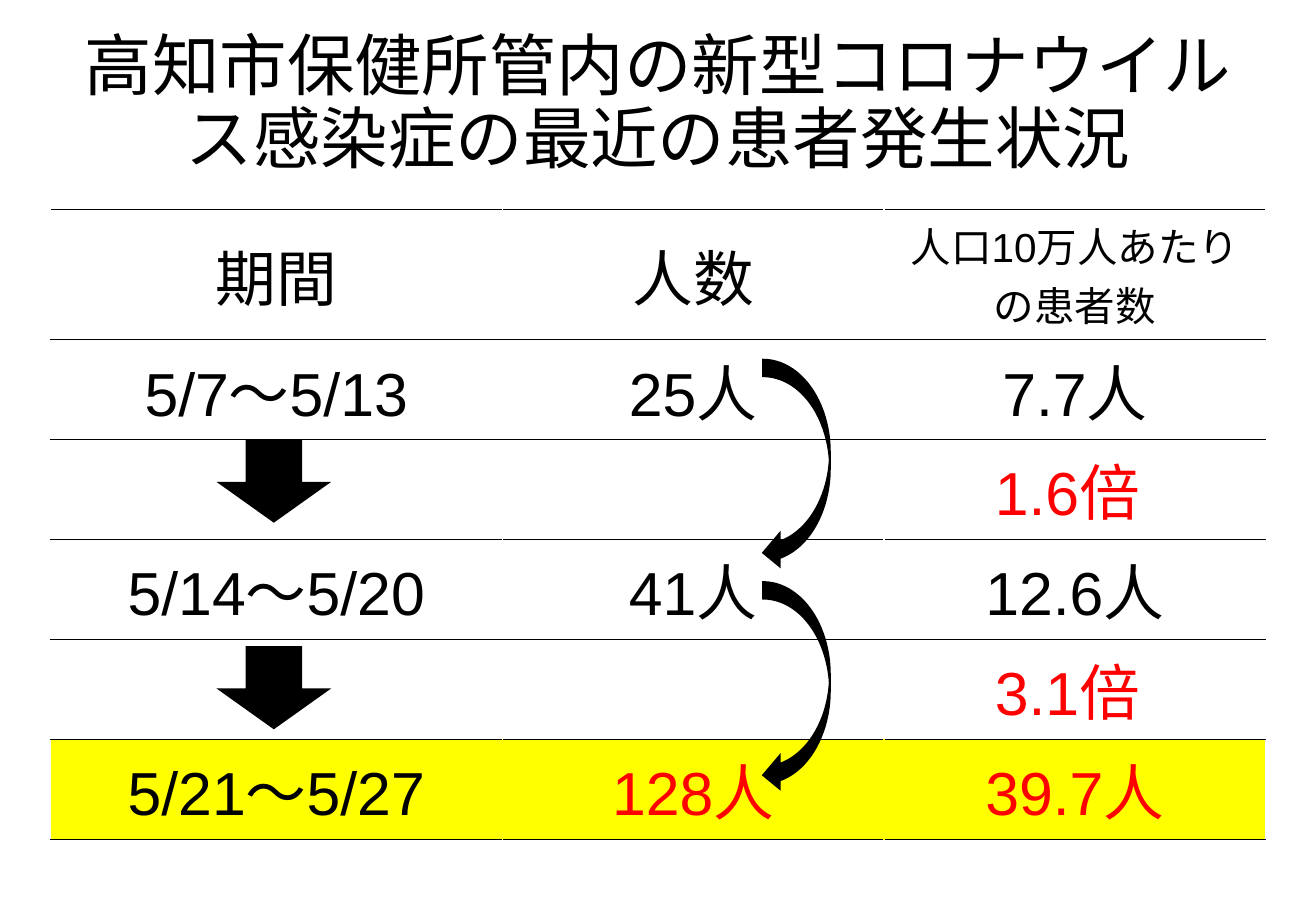
from lxml.etree import SubElement
from pptx import Presentation
from pptx.dml.color import RGBColor
from pptx.enum.shapes import MSO_SHAPE as Shape
from pptx.enum.text import MSO_ANCHOR as Anchor, PP_ALIGN as Align
from pptx.oxml.ns import qn
from pptx.util import Cm, Pt

# Content
BLACK, WHITE, RED, YELLOW = "000000", "FFFFFF", "FF0000", "FFFF00"
LATIN, JAPANESE = "Arial", "Noto Sans CJK JP"
TITLE = "高知市保健所管内の新型コロナウイルス感染症の最近の患者発生状況"
HEADINGS = [("期間", 36), ("人数", 36), ("人口10万人あたりの患者数", 24)]
PERIODS = [
    ("5/7～5/13", "25人", "7.7人"),
    ("5/14～5/20", "41人", "12.6人"),
    ("5/21～5/27", "128人", "39.7人"),
]
GROWTH = ["1.6倍", "3.1倍"]

# Layout in cm
TITLE_BOX = (1.37, 0, 24.77, 4.39)
TABLE_LEFT, TABLE_TOP = 1.05, 4.38
COLUMN_WIDTHS = [9.45, 7.98, 7.98]
HEADING_HEIGHT, ROW_HEIGHT = 2.72, 2.09
GROWTH_INDENT = 2.63
ARROWS = [  # preset, left, width, height, tops, adjustments
    (Shape.DOWN_ARROW, 4.58, 2.29, 1.7, (9.21, 13.53), (0.5, 0.48)),
    (Shape.CURVED_LEFT_ARROW, 15.95, 1.4, 4.39, (7.52, 12.17), ()),
]


def color(hex_code):
    return RGBColor.from_string(hex_code)


def write(frame, text, size, ink=BLACK, latin=LATIN, align=Align.CENTER):
    paragraph = frame.paragraphs[0]
    paragraph.alignment = align
    run = paragraph.add_run()
    run.text = text
    run.font.size = Pt(size)
    run.font.name = latin
    run.font.color.rgb = color(ink)
    SubElement(run._r.get_or_add_rPr(), qn("a:ea"), typeface=JAPANESE)
    return paragraph


def style_cell(cell, left_edge=WHITE, right_edge=WHITE, fill=None):
    props = cell._tc.get_or_add_tcPr()
    edges = [("L", left_edge, 0.75), ("R", right_edge, 0.75),
             ("T", BLACK, 1), ("B", BLACK, 1)]
    for side, ink, width in edges:
        edge = SubElement(props, qn("a:ln" + side), w=str(Pt(width)))
        solid = SubElement(edge, qn("a:solidFill"))
        SubElement(solid, qn("a:srgbClr"), val=ink)
    if fill:
        cell.fill.solid()
        cell.fill.fore_color.rgb = color(fill)
    else:
        cell.fill.background()
    cell.vertical_anchor = Anchor.MIDDLE


deck = Presentation()
deck.slide_width, deck.slide_height = Cm(27.51), Cm(19.05)
slide = deck.slides.add_slide(deck.slide_layouts[6])

# Title
title = slide.shapes.add_textbox(*map(Cm, TITLE_BOX)).text_frame
title.word_wrap = True
title.vertical_anchor = Anchor.MIDDLE
write(title, TITLE, 40, latin=JAPANESE).line_spacing = 0.9

# Table: headings, then periods with a growth row between each pair
row_count = 1 + len(PERIODS) + len(GROWTH)
heights = [HEADING_HEIGHT] + [ROW_HEIGHT] * (row_count - 1)
table = slide.shapes.add_table(
    row_count, len(COLUMN_WIDTHS), Cm(TABLE_LEFT), Cm(TABLE_TOP),
    Cm(sum(COLUMN_WIDTHS)), Cm(sum(heights))).table
table.first_row = table.horz_banding = False
for column, width in zip(table.columns, COLUMN_WIDTHS):
    column.width = Cm(width)
for row, height in zip(table.rows, heights):
    row.height = Cm(height)

last_row, last_col = row_count - 1, len(COLUMN_WIDTHS) - 1
for r in range(row_count):
    for c in range(last_col + 1):
        if r == last_row:
            style_cell(table.cell(r, c), YELLOW if c else WHITE,
                       YELLOW if c < last_col else WHITE, YELLOW)
        else:
            style_cell(table.cell(r, c))

for c, (heading, size) in enumerate(HEADINGS):
    write(table.cell(0, c).text_frame, heading, size)
for i, period in enumerate(PERIODS):
    r = 1 + 2 * i
    for c, value in enumerate(period):
        ink = RED if r == last_row and c else BLACK
        write(table.cell(r, c).text_frame, value, 36, ink)
for i, growth in enumerate(GROWTH):
    r = 2 + 2 * i
    merged = table.cell(r, 0)
    merged.merge(table.cell(r, last_col))
    merged.margin_right = Cm(GROWTH_INDENT)
    write(merged.text_frame, growth, 36, RED, align=Align.RIGHT)

# Arrows from one period to the next, with sharp corners
for preset, left, width, height, tops, adjustments in ARROWS:
    for top in tops:
        arrow = slide.shapes.add_shape(
            preset, Cm(left), Cm(top), Cm(width), Cm(height))
        for i, value in enumerate(adjustments):
            arrow.adjustments[i] = value
        arrow.shadow.inherit = False
        arrow.fill.solid()
        arrow.fill.fore_color.rgb = color(BLACK)
        arrow.line.color.rgb = color(BLACK)
        arrow.line.width = Pt(1)
        SubElement(arrow.line._get_or_add_ln(), qn("a:miter"), lim="800000")

deck.save("out.pptx")
